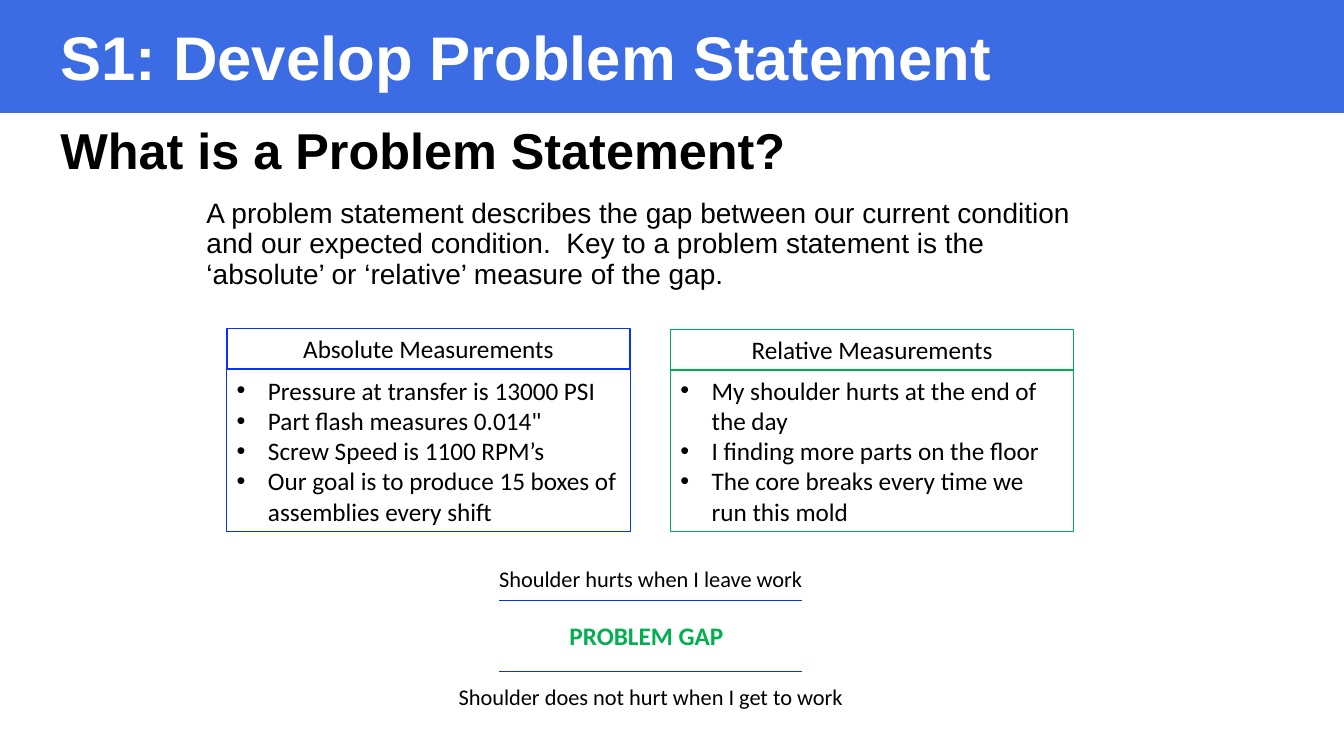
from lxml.etree import SubElement
from pptx import Presentation
from pptx.dml.color import RGBColor as Rgb
from pptx.enum.shapes import MSO_CONNECTOR as Link, MSO_SHAPE as Kind
from pptx.enum.text import MSO_ANCHOR as Anchor, MSO_AUTO_SIZE as Fit, PP_ALIGN as Align
from pptx.oxml.ns import qn
from pptx.util import Pt

HUES = {
    "band": "3B6CE3",
    "white": "FFFFFF",
    "black": "000000",
    "blue": "0432FF",
    "green": "00B050",
}
SCALE = 9144


class Deck:
    def __init__(self, wide, high):
        self.file = Presentation()
        self.file.slide_width = wide * SCALE
        self.file.slide_height = high * SCALE
        self.slide = self.file.slides.add_slide(self.file.slide_layouts[6])

    def hue(self, name):
        return Rgb.from_string(HUES[name])

    def font(self, para, size, face, hue="black", bold=False):
        font = para.font
        font.size, font.name, font.bold = Pt(size), face, bold
        font.color.rgb = self.hue(hue)

    def bullet(self, para):
        props = para._p.get_or_add_pPr()
        props.set("marL", str(31 * SCALE))
        props.set("indent", str(-31 * SCALE))
        SubElement(props, qn("a:buFont"), typeface="Arial")
        SubElement(props, qn("a:buChar"), char="•")

    def rect(self, spot, fill=None, line=None, width=1):
        box = self.slide.shapes.add_shape(Kind.RECTANGLE, *(n * SCALE for n in spot))
        box.shadow.inherit = False
        if fill:
            box.fill.solid()
            box.fill.fore_color.rgb = self.hue(fill)
        else:
            box.fill.background()
        if line:
            box.line.color.rgb = self.hue(line)
            box.line.width = Pt(width)
        else:
            box.line.fill.background()
        return box

    def words(self, box, lines, size, face, hue="black", bold=False, align=Align.LEFT,
              anchor=Anchor.TOP, wrap=True, space=None, dots=False):
        frame = box.text_frame
        frame.word_wrap = wrap
        frame.vertical_anchor = anchor
        for i, line in enumerate(lines):
            para = frame.add_paragraph() if i else frame.paragraphs[0]
            para.text = line
            para.alignment = align
            if space:
                para.line_spacing = space
            if dots:
                self.bullet(para)
            self.font(para, size, face, hue, bold)
        return frame

    def text(self, spot, line, size, face, **style):
        box = self.slide.shapes.add_textbox(*(n * SCALE for n in spot))
        return self.words(box, [line], size, face, **style)

    def card(self, left, top, hue, title, items):
        head = self.rect((left, top, 400, 40), line=hue)
        self.words(head, [title], 18, "Calibri", align=Align.CENTER,
                   anchor=Anchor.MIDDLE, wrap=False)
        body = self.rect((left, 367, 400, 160), line=hue, width=0.75)
        self.words(body, items, 18, "Calibri", anchor=Anchor.MIDDLE, dots=True)

    def label(self, spot, line):
        frame = self.text(spot, line, 16, "Calibri", align=Align.CENTER, wrap=False)
        frame.auto_size = Fit.SHAPE_TO_FIT_TEXT

    def rule(self, left, right, top, hue):
        ends = (n * SCALE for n in (left, top, right, top))
        line = self.slide.shapes.add_connector(Link.STRAIGHT, *ends)
        line.line.color.rgb = self.hue(hue)
        line.line.width = Pt(1)
        SubElement(line._element.spPr, qn("a:effectLst"))


def main():
    deck = Deck(1333, 750)
    deck.rect((0, 0, 1333, 112), fill="band")
    deck.text((50, 20, 1047, 80), "S1: Develop Problem Statement", 44, "Arial",
              hue="white", bold=True, anchor=Anchor.MIDDLE, space=0.9)
    deck.text((50, 119, 1045, 65), "What is a Problem Statement?", 36, "Arial",
              bold=True, anchor=Anchor.MIDDLE, space=0.9)
    deck.text((195, 193, 900, 106),
              "A problem statement describes the gap between our current condition "
              "and our expected condition.  Key to a problem statement is the "
              "‘absolute’ or ‘relative’ measure of the gap.",
              20, "Arial", space=0.9)

    deck.card(225, 326, "blue", "Absolute Measurements", [
        "Pressure at transfer is 13000 PSI",
        'Part flash measures 0.014"',
        "Screw Speed is 1100 RPM’s",
        "Our goal is to produce 15 boxes of assemblies every shift",
    ])
    deck.card(665, 327, "green", "Relative Measurements", [
        "My shoulder hurts at the end of the day",
        "I finding more parts on the floor",
        "The core breaks every time we run this mold",
    ])

    for top in (596, 666):
        deck.rule(495, 795, top, "blue")
    deck.label((483, 556, 325, 37), "Shoulder hurts when I leave work")
    deck.label((442, 673, 407, 37), "Shoulder does not hurt when I get to work")
    deck.text((555, 611, 180, 40), "PROBLEM GAP", 18, "Calibri", hue="green", bold=True)
    deck.file.save("out.pptx")


if __name__ == "__main__":
    main()
